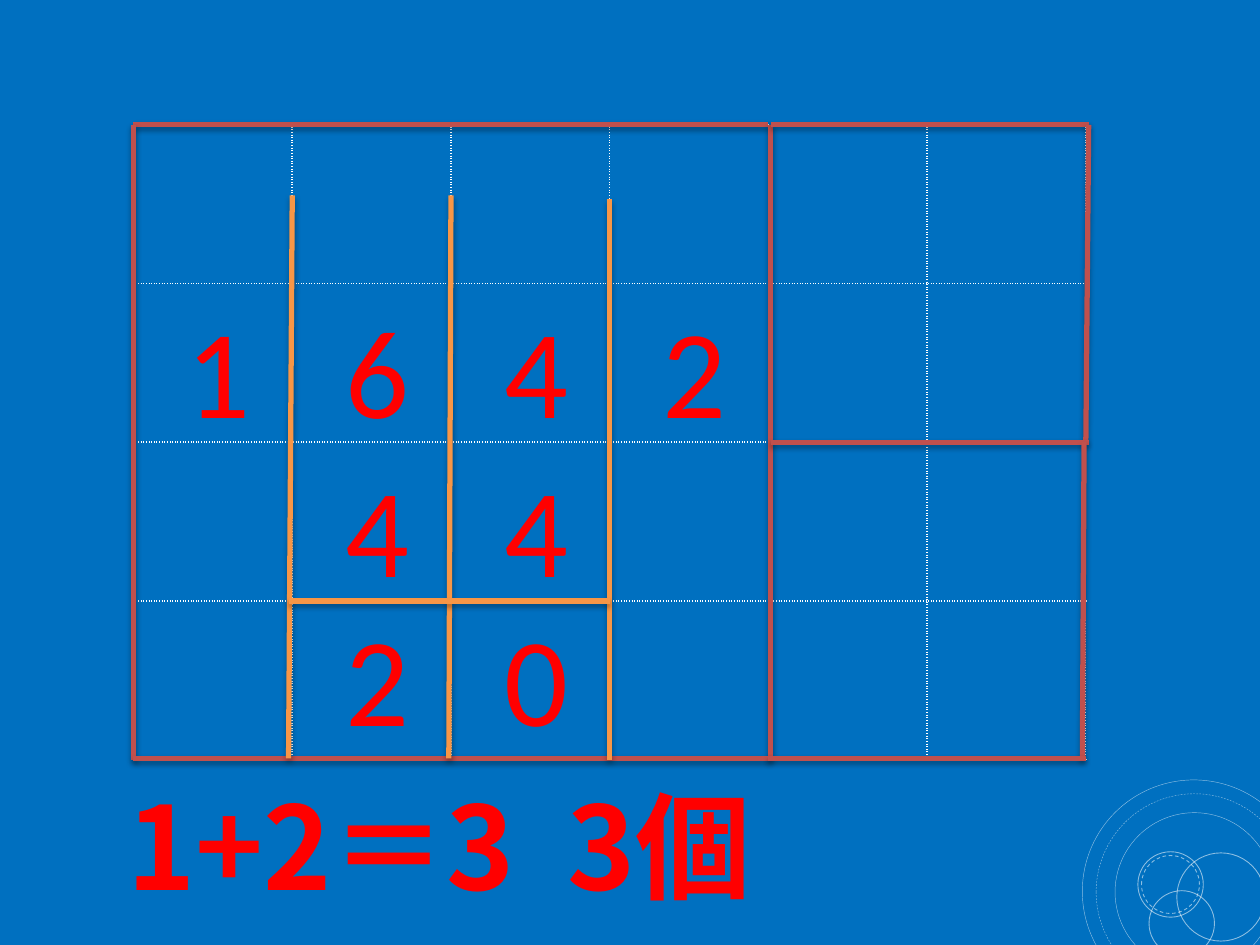
from typing import NamedTuple

from lxml import etree
from pptx import Presentation
from pptx.dml.color import RGBColor
from pptx.enum.dml import MSO_LINE
from pptx.enum.shapes import MSO_CONNECTOR, MSO_SHAPE
from pptx.enum.text import MSO_ANCHOR, PP_ALIGN
from pptx.oxml import parse_xml
from pptx.oxml.ns import nsdecls, qn
from pptx.util import Pt

STRAIGHT = MSO_CONNECTOR.STRAIGHT
OVAL = MSO_SHAPE.OVAL
SOLID, DASH = MSO_LINE.SOLID, MSO_LINE.DASH
MIDDLE = MSO_ANCHOR.MIDDLE
CENTER, LEFT_ALIGNED = PP_ALIGN.CENTER, PP_ALIGN.LEFT

BLUE, WHITE, RED = "0070C0", "FFFFFF", "FF0000"
BRICK, ORANGE = "C0504D", "F79646"
KOREAN_FONT, CHINESE_FONT = "Noto Sans CJK KR", "Noto Sans CJK TC"

ROWS, COLUMNS = 4, 6
CELL = 90.7
GRID_LEFT, GRID_TOP = 76.3, 71.3
GRID_BOTTOM = GRID_TOP + ROWS * CELL
DIGIT_BOX = 62.6
SUM_GAP = 15


class Line(NamedTuple):
    x1: float
    y1: float
    x2: float
    y2: float
    color: str


class Digit(NamedTuple):
    text: str
    column: int
    top: float


class Circle(NamedTuple):
    left: float
    top: float
    size: float
    width: float
    dash: MSO_LINE


class Run(NamedTuple):
    text: str
    font: str
    size: float
    bold: bool = False
    spacing: float = 0


def column_x(column: int) -> float:
    return GRID_LEFT + column * CELL


def row_y(row: int) -> float:
    return GRID_TOP + row * CELL


MIDDLE_X, RIGHT_X = column_x(4) + 1.4, column_x(6)
LINES = [
    Line(GRID_LEFT, GRID_TOP, column_x(4), GRID_TOP, BRICK),
    Line(GRID_LEFT, GRID_TOP, GRID_LEFT, GRID_BOTTOM, BRICK),
    Line(MIDDLE_X, GRID_TOP, MIDDLE_X, GRID_BOTTOM, BRICK),
    Line(GRID_LEFT, 433.4, column_x(4), 433.4, BRICK),
    Line(MIDDLE_X, GRID_TOP, 622.1, GRID_TOP, BRICK),
    Line(622.1, GRID_TOP, RIGHT_X, row_y(2), BRICK),
    Line(MIDDLE_X, row_y(2), 622.1, row_y(2), BRICK),
    Line(619.5, row_y(2), 618.5, GRID_BOTTOM, BRICK),
    Line(column_x(4), 433.4, RIGHT_X, 433.4, BRICK),
    Line(column_x(1), 111.6, 164.9, 433.4, ORANGE),
    Line(column_x(2), 111.6, 256.5, 433.4, ORANGE),
    Line(column_x(3), 113.8, column_x(3), GRID_BOTTOM, ORANGE),
    Line(column_x(3), row_y(3), 164.9, row_y(3), ORANGE),
]
DIGITS = [
    *(Digit(text, column, 179.3) for column, text in enumerate("1642")),
    *(Digit(text, column, 270) for column, text in enumerate("44", 1)),
    *(Digit(text, column, 355) for column, text in enumerate("20", 1)),
]
SUM_RUNS = [
    Run("1+2＝3", KOREAN_FONT, 66, True),
    Run(" ", KOREAN_FONT, 66, True, SUM_GAP),
    Run("3", KOREAN_FONT, 66, True),
    Run("個", CHINESE_FONT, 66, True),
]
CIRCLES = [
    Circle(637.2, 464.4, 90.7, 0.25, SOLID),
    Circle(618.5, 445.7, 127.4, 0.25, SOLID),
    Circle(626.4, 453.6, 112.3, 0.25, DASH),
    Circle(650.2, 486.7, 37.4, 0.5, SOLID),
    Circle(652.3, 488.9, 33.1, 0.5, DASH),
    Circle(656.6, 509, 37.4, 0.5, SOLID),
    Circle(672.5, 487.4, 50.4, 0.5, SOLID),
]


def rgb(color: str) -> RGBColor:
    return RGBColor.from_string(color)


def add_grid(slide) -> None:
    size = COLUMNS * CELL, ROWS * CELL
    frame = slide.shapes.add_table(
        ROWS, COLUMNS, Pt(GRID_LEFT), Pt(GRID_TOP), Pt(size[0]), Pt(size[1]))
    table = frame.table
    table.first_row = table.horz_banding = False
    for column in table.columns:
        column.width = Pt(CELL)
    for row in table.rows:
        row.height = Pt(CELL)
    for cell in table.iter_cells():
        properties = cell._tc.get_or_add_tcPr()
        for side in "LRTB":
            properties.append(parse_xml(
                f'<a:ln{side} {nsdecls("a")} w="{Pt(1)}"><a:solidFill>'
                f'<a:srgbClr val="{WHITE}"/></a:solidFill>'
                f'<a:prstDash val="sysDot"/></a:ln{side}>'))
        cell.fill.background()


def add_line(slide, line: Line) -> None:
    connector = slide.shapes.add_connector(
        STRAIGHT, Pt(line.x1), Pt(line.y1), Pt(line.x2), Pt(line.y2))
    connector.line.color.rgb = rgb(line.color)
    connector.line.width = Pt(3)
    connector._element.spPr.append(parse_xml(
        f'<a:effectLst {nsdecls("a")}><a:outerShdw blurRad="{Pt(3.1)}" '
        f'dist="{Pt(1.8)}" dir="5400000" rotWithShape="0">'
        '<a:srgbClr val="000000"><a:alpha val="35000"/></a:srgbClr>'
        '</a:outerShdw></a:effectLst>'))


def add_text(slide, left: float, top: float, width: float, height: float,
             alignment: PP_ALIGN, runs: list[Run]) -> None:
    box = slide.shapes.add_textbox(Pt(left), Pt(top), Pt(width), Pt(height))
    frame = box.text_frame
    frame.word_wrap = True
    frame.vertical_anchor = MIDDLE
    paragraph = frame.paragraphs[0]
    paragraph.alignment = alignment
    for item in runs:
        run = paragraph.add_run()
        run.text = item.text
        font = run.font
        font.name, font.size, font.bold = item.font, Pt(item.size), item.bold
        font.color.rgb = rgb(RED)
        properties = run._r.get_or_add_rPr()
        etree.SubElement(properties, qn("a:ea"), typeface=item.font)
        if item.spacing:
            properties.set("spc", str(round(item.spacing * 100)))


def add_circle(group, circle: Circle) -> None:
    shape = group.shapes.add_shape(
        OVAL, Pt(circle.left), Pt(circle.top), Pt(circle.size), Pt(circle.size))
    shape.shadow.inherit = False
    shape.fill.background()
    shape.line.color.rgb = rgb(WHITE)
    shape.line.width = Pt(circle.width)
    shape.line.dash_style = circle.dash
    color = shape.line._ln.find(".//" + qn("a:srgbClr"))
    etree.SubElement(color, qn("a:alpha"), val="54000")


def main() -> None:
    presentation = Presentation()
    presentation.slide_width, presentation.slide_height = Pt(720), Pt(540)
    slide = presentation.slides.add_slide(presentation.slide_layouts[6])
    slide.background.fill.solid()
    slide.background.fill.fore_color.rgb = rgb(BLUE)

    circles = slide.shapes.add_group_shape()
    for circle in CIRCLES:
        add_circle(circles, circle)
    add_grid(slide)
    for line in LINES:
        add_line(slide, line)
    for digit in DIGITS:
        add_text(slide, column_x(digit.column) + 17.3, digit.top, DIGIT_BOX,
                 DIGIT_BOX, CENTER, [Run(digit.text, "Calibri", 72)])
    add_text(slide, 65.5, 451.4, 589.7, 61.9, LEFT_ALIGNED, SUM_RUNS)
    presentation.save("out.pptx")


if __name__ == "__main__":
    main()
